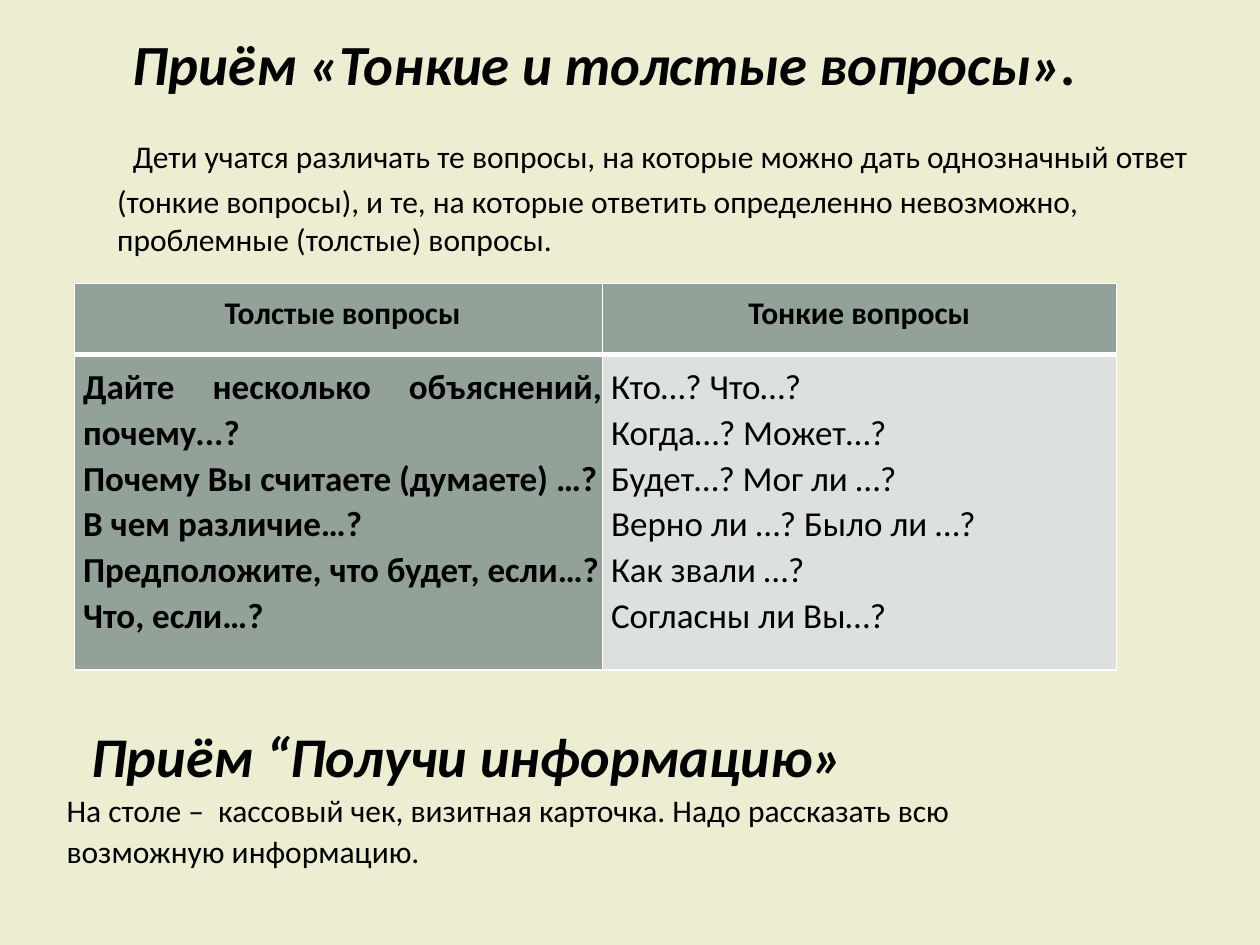
from lxml import etree
from pptx import Presentation
from pptx import util as u
from pptx.dml.color import RGBColor
from pptx.enum import text
from pptx.oxml.ns import qn

FONT = "Calibri"
INK, WHITE, SAGE, PALE, CREAM = "000000", "FFFFFF", "93A299", "DCE0DE", "ECEDD1"


def paint(fill, colour):
    fill.solid()
    fill.fore_color.rgb = RGBColor.from_string(colour)


def add_run(paragraph, words, size, bold=False, italic=False):
    run = paragraph.add_run()
    run.text = words
    run.font.name, run.font.size = FONT, u.Pt(size)
    run.font.bold, run.font.italic = bold, italic
    paint(run.font.fill, INK)


prs = Presentation()
prs.slide_width, prs.slide_height = u.Inches(10), u.Inches(7.5)
W, H = prs.slide_width / 100, prs.slide_height / 100  # one percent of the slide
slide = prs.slides.add_slide(prs.slide_layouts[5])
paint(slide.background.fill, CREAM)

# Title with the explanation of the first technique
title = slide.shapes.title
title.left, title.top = int(8.3 * W), int(1 * H)
title.width, title.height = int(90 * W), int(27.5 * H)
frame = title.text_frame
frame.auto_size = text.MSO_AUTO_SIZE.NONE
frame.word_wrap = True
frame.vertical_anchor = text.MSO_ANCHOR.TOP
intro = frame.paragraphs[0]
intro.alignment = text.PP_ALIGN.LEFT
add_run(intro, " ", 39.6, True, True)
add_run(intro, "Приём «Тонкие и толстые вопросы».", 32.4, True, True)
intro.add_line_break()
add_run(intro, " ", 39.6)
add_run(intro, "Дети учатся различать те вопросы, на которые можно дать однозначный "
        "ответ (тонкие вопросы), и те, на которые ответить определенно "
        "невозможно, проблемные (толстые) вопросы.", 18)

# Table of question types
thick_questions = ["Дайте несколько объяснений, почему...?",
                   "Почему Вы считаете (думаете) …?",
                   "В чем различие…?",
                   "Предположите, что будет, если…?",
                   "Что, если…?"]
thin_questions = ["Кто…? Что…?", "Когда…? Может…?", "Будет…? Мог ли …?",
                  "Верно ли …? Было ли …?", "Как звали …?", "Согласны ли Вы…?"]
rows = [[["Толстые вопросы"], ["Тонкие вопросы"]],
        [thick_questions, thin_questions]]
col_widths, row_heights = [41.9, 40.8], [7.5, 33.4]

questions = slide.shapes.add_table(
    2, 2, int(5.9 * W), int(30 * H),
    int(sum(col_widths) * W), int(sum(row_heights) * H)).table
for column, width in zip(questions.columns, col_widths):
    column.width = int(width * W)
for row, height in zip(questions.rows, row_heights):
    row.height = int(height * H)

for r, row in enumerate(rows):
    for c, lines in enumerate(row):
        cell = questions.cell(r, c)
        header = r == 0
        thin_cell = r == 1 and c == 1
        cell.margin_left = cell.margin_top = cell.margin_bottom = u.Inches(0.07)
        cell.margin_right = u.Inches(0.07 * c)
        # White borders, heavier between header and body
        heavy = "lnB" if header else "lnT"
        for side in ("lnL", "lnR", "lnT", "lnB"):
            border = etree.SubElement(cell._tc.get_or_add_tcPr(), qn("a:" + side),
                                      w=str(u.Pt(3 if side == heavy else 1)))
            solid = etree.SubElement(border, qn("a:solidFill"))
            etree.SubElement(solid, qn("a:srgbClr"), val=WHITE)
        paint(cell.fill, PALE if thin_cell else SAGE)
        for i, line in enumerate(lines):
            frame = cell.text_frame
            paragraph = frame.add_paragraph() if i else frame.paragraphs[0]
            paragraph.alignment = (text.PP_ALIGN.CENTER if header
                                   else text.PP_ALIGN.JUSTIFY)
            paragraph.line_spacing = 1.07
            add_run(paragraph, line, 18 if header else 20, bold=not thin_cell)

# Second technique
second = slide.shapes.add_textbox(int(4.3 * W), int(71.07 * H),
                                  int(84.3 * W), int(21.87 * H))
frame = second.text_frame
frame.word_wrap = True
frame.margin_top = u.Inches(0.36)
heading, task = frame.paragraphs[0], frame.add_paragraph()
heading.line_spacing = task.line_spacing = 1.07
heading._p.get_or_add_pPr().set("indent", str(u.Inches(0.2)))
add_run(heading, "Приём “Получи информацию»", 32, True, True)
add_run(task, "На столе –  кассовый чек, визитная карточка. "
        "Надо рассказать всю возможную информацию.", 18)

prs.save("out.pptx")
